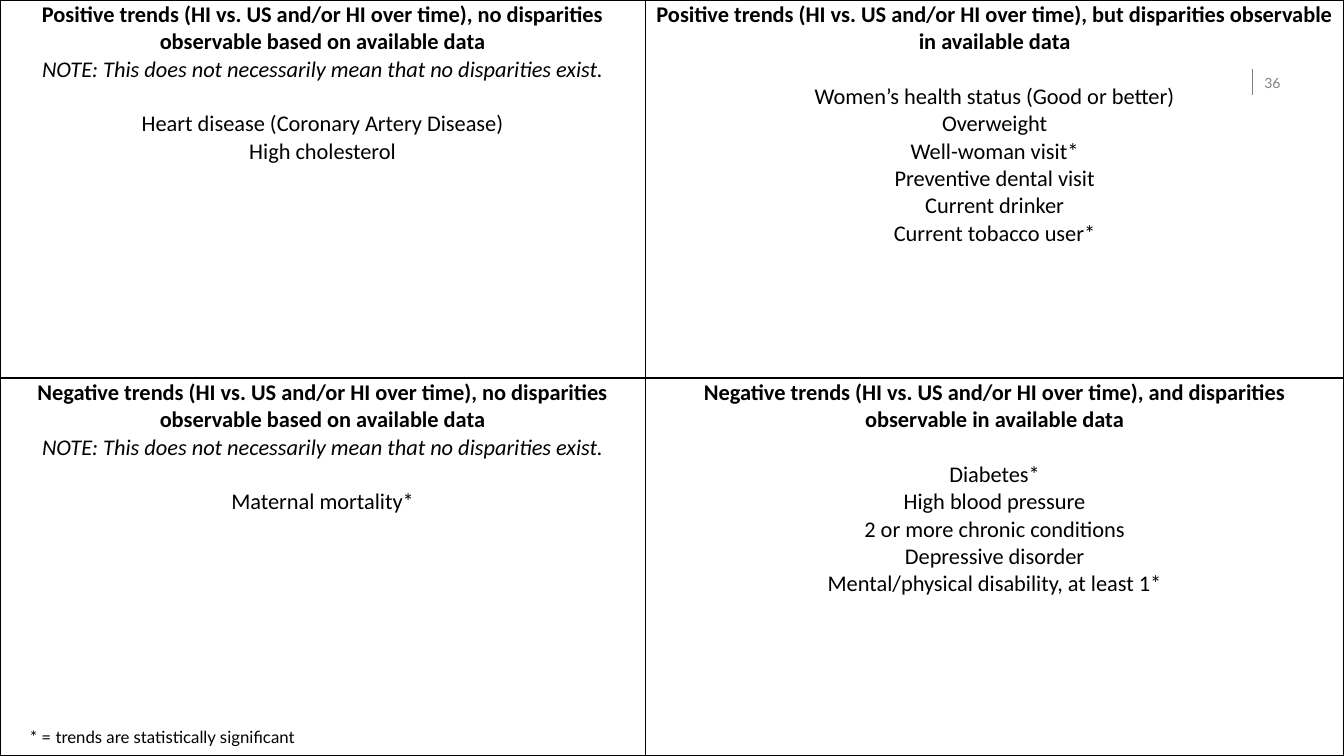
from dataclasses import dataclass

import pptx
import pptx.dml.color
import pptx.enum.shapes
import pptx.enum.text
import pptx.oxml
import pptx.oxml.ns
import pptx.util
from pptx.util import Inches

BLACK = pptx.dml.color.RGBColor(0x00, 0x00, 0x00)
GRAY = pptx.dml.color.RGBColor(0x80, 0x82, 0x85)
WIDTH, HEIGHT = 13.33, 7.5
COLUMN_WIDTHS = (6.4, 6.93)
LINE_PITCH = 19.5
NOTE = "NOTE: This does not necessarily mean that no disparities exist."


@dataclass
class Quadrant:
    row: int
    column: int
    heading: str
    conditions: list[str]
    note: str = ""


QUADRANTS = [
    Quadrant(0, 0, "Positive trends (HI vs. US and/or HI over time), no disparities "
             "observable based on available data",
             ["Heart disease (Coronary Artery Disease)", "High cholesterol"], NOTE),
    Quadrant(0, 1, "Positive trends (HI vs. US and/or HI over time), but disparities "
             "observable in available data",
             ["Women’s health status (Good or better)", "Overweight", "Well-woman visit*",
              "Preventive dental visit", "Current drinker", "Current tobacco user*"]),
    Quadrant(1, 0, "Negative trends (HI vs. US and/or HI over time), no disparities "
             "observable based on available data",
             ["Maternal mortality*"], NOTE),
    Quadrant(1, 1, "Negative trends (HI vs. US and/or HI over time), and disparities "
             "observable in available data",
             ["Diabetes*", "High blood pressure", "2 or more chronic conditions",
              "Depressive disorder", "Mental/physical disability, at least 1*"]),
]


def write(para, text: str, *, size: float, font: str, color=BLACK, bold: bool = False,
          italic: bool = False, centered: bool = False, before: float = 0) -> None:
    """Put one formatted span into a paragraph."""
    if centered:
        para.alignment = pptx.enum.text.PP_ALIGN.CENTER
    para.space_before = pptx.util.Pt(before)
    span = para.add_run()
    span.text = text
    span.font.size = pptx.util.Pt(size)
    span.font.name = font
    span.font.bold = bold
    span.font.italic = italic
    span.font.color.rgb = color


def add_borders(cell) -> None:
    """Outline all four sides of a table cell in black."""
    properties = cell._tc.get_or_add_tcPr()
    for side in ("lnL", "lnR", "lnT", "lnB"):
        properties.append(pptx.oxml.parse_xml(
            f'<a:{side} {pptx.oxml.ns.nsdecls("a")} w="{pptx.util.Pt(1)}">'
            f'<a:solidFill><a:srgbClr val="{BLACK}"/></a:solidFill></a:{side}>'))


def fill_quadrant(cell, quadrant: Quadrant) -> None:
    add_borders(cell)
    cell.fill.background()
    cell.margin_left = cell.margin_right = Inches(0.05)
    cell.margin_top, cell.margin_bottom = Inches(0.01), 0
    frame = cell.text_frame
    style = dict(size=16, font="Calibri", centered=True)
    write(frame.paragraphs[0], quadrant.heading, bold=True, **style)
    if quadrant.note:
        write(frame.add_paragraph(), quadrant.note, italic=True, **style)
    for index, condition in enumerate(quadrant.conditions):
        write(frame.add_paragraph(), condition,
              before=0 if index else LINE_PITCH, **style)


def add_page_number(page) -> None:
    rule = page.shapes.add_connector(
        pptx.enum.shapes.MSO_CONNECTOR.STRAIGHT,
        Inches(12.42), Inches(0.68), Inches(12.42), Inches(0.94))
    rule.line.color.rgb = GRAY
    rule.line.width = pptx.util.Pt(1)
    rule._element.spPr.append(pptx.oxml.parse_xml(
        f'<a:effectLst {pptx.oxml.ns.nsdecls("a")}/>'))
    box = page.shapes.add_textbox(Inches(12.54), Inches(0.62), Inches(0.33), Inches(0.4))
    frame = box.text_frame
    frame.word_wrap = True
    frame.margin_left = frame.margin_right = 0
    frame.vertical_anchor = pptx.enum.text.MSO_ANCHOR.MIDDLE
    write(frame.paragraphs[0], "36", size=10, font="Lato", color=GRAY)


def add_quadrant_table(page) -> None:
    table = page.shapes.add_table(2, 2, 0, 0, Inches(WIDTH), Inches(HEIGHT)).table
    table.first_row = table.horz_banding = False
    for column, width in zip(table.columns, COLUMN_WIDTHS):
        column.width = Inches(width)
    for row in table.rows:
        row.height = Inches(HEIGHT / 2)
    for quadrant in QUADRANTS:
        fill_quadrant(table.cell(quadrant.row, quadrant.column), quadrant)


def add_footnote(page) -> None:
    box = page.shapes.add_textbox(Inches(0.2), Inches(7.16), Inches(4.62), Inches(0.3))
    frame = box.text_frame
    frame.word_wrap = True
    frame.auto_size = pptx.enum.text.MSO_AUTO_SIZE.SHAPE_TO_FIT_TEXT
    write(frame.paragraphs[0], "* = trends are statistically significant",
          size=12, font="Lato")


def main() -> None:
    deck = pptx.Presentation()
    deck.slide_width, deck.slide_height = Inches(WIDTH), Inches(HEIGHT)
    page = deck.slides.add_slide(deck.slide_layouts[6])
    add_page_number(page)
    add_quadrant_table(page)
    add_footnote(page)
    deck.save("out.pptx")


if __name__ == "__main__":
    main()
